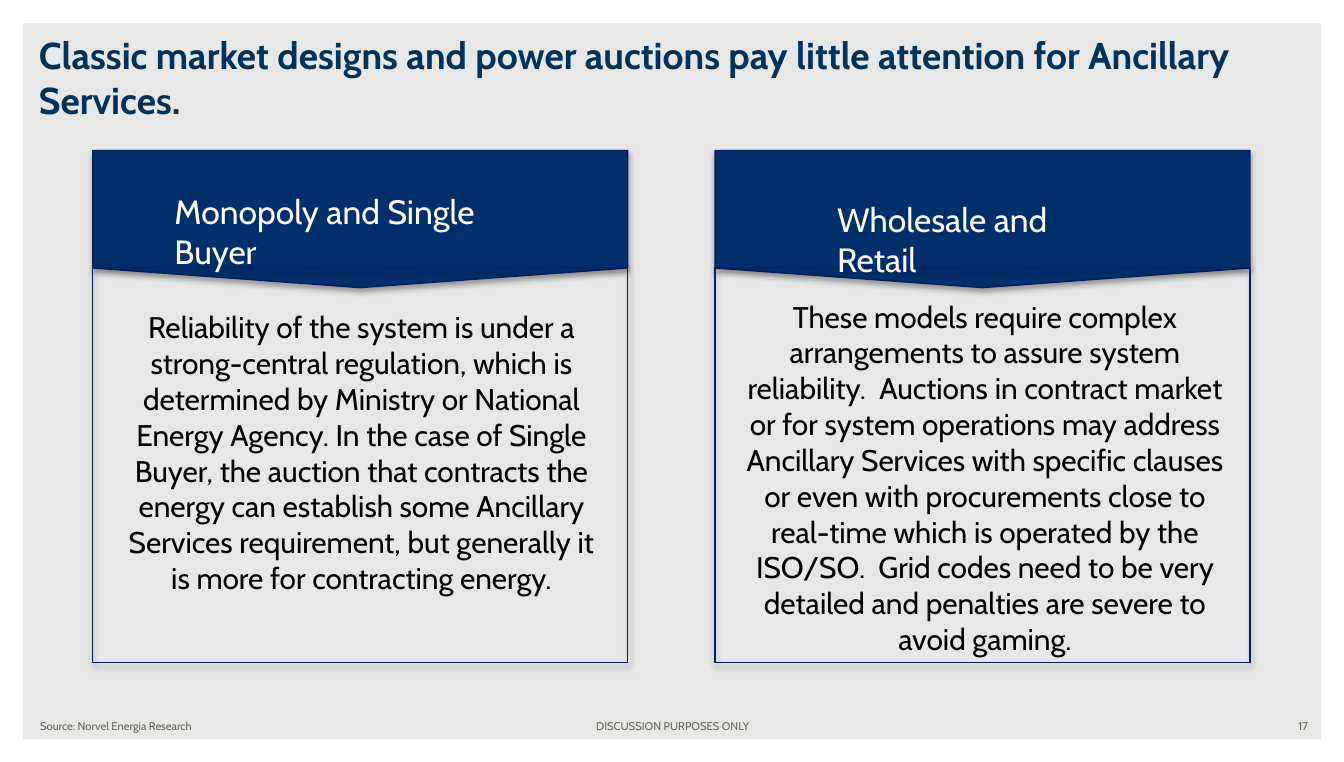
from lxml.etree import SubElement
from pptx import Presentation
from pptx.dml.color import RGBColor
from pptx.enum.shapes import MSO_SHAPE as Shape
from pptx.enum.text import MSO_ANCHOR as Anchor, MSO_AUTO_SIZE as AutoSize, PP_ALIGN as Align
from pptx.oxml.ns import qn
from pptx.util import Inches, Pt

WIDTH, HEIGHT = 10, 5.67
FONT = "Cabin"
COLORS = {
    "background": "E7E7E5",
    "white": "FFFFFF",
    "title": "00335C",
    "banner": "002F6C",
    "outline": "002060",
    "body": "000000",
    "footer": "6C6463",
    "shadow": "000000",
}

# Two equal columns of cards
CARD_LEFT, CARD_PITCH, CARD_WIDTH = 0.69, 4.63, 3.98
BANNER_TOP, BANNER_HEIGHT = 1.12, 1.02
PANEL_TOP, PANEL_HEIGHT = 1.99, 2.94
FOOTER_TOP, FOOTER_HEIGHT = 5.3, 0.2

# Heading, its box; body, its box. Boxes are measured from the card's left edge.
CARDS = [
    ("Monopoly and Single Buyer", (0.51, 1.37, 2.9, 0.4),
     "Reliability of the system is under a strong-central regulation, which is "
     "determined by Ministry or National Energy Agency. In the case of Single "
     "Buyer, the auction that contracts the energy can establish some Ancillary "
     "Services requirement, but generally it is more for contracting energy.",
     (0.09, 2.25, 3.82, 2.26)),
    ("Wholesale and Retail", (0.81, 1.43, 2.3, 0.4),
     "These models require complex arrangements to assure system reliability.  "
     "Auctions in contract market or for system operations may address Ancillary "
     "Services with specific clauses or even with procurements close to real-time "
     "which is operated by the ISO/SO.  Grid codes need to be very detailed and "
     "penalties are severe to avoid gaming.",
     (0.06, 2.17, 3.9, 2.52)),
]
FOOTERS = [
    ("Source: Norvel Energia Research", 0.2, 3.17, Align.LEFT),
    ("DISCUSSION PURPOSES ONLY", 3.42, 3.17, Align.CENTER),
    ("17", 7.5, 2.33, Align.RIGHT),
]


def color(name):
    return RGBColor.from_string(COLORS[name])


def write(shape, text, size, color_name, align=Align.LEFT, anchor=Anchor.TOP, bold=False):
    frame = shape.text_frame
    frame.text = text
    frame.word_wrap = True
    frame.auto_size = AutoSize.NONE
    frame.vertical_anchor = anchor
    paragraph = frame.paragraphs[0]
    paragraph.alignment = align
    font = paragraph.runs[0].font
    font.name, font.size, font.bold = FONT, Pt(size), bold
    font.color.rgb = color(color_name)


def add_text(slide, box, text, size, color_name, **options):
    shape = slide.shapes.add_textbox(*map(Inches, box))
    write(shape, text, size, color_name, **options)


def add_shadow(shape):
    """Give the shape a soft shadow that falls straight down."""
    shape.shadow.inherit = False
    effects = shape._element.spPr.find(qn("a:effectLst"))
    shadow = SubElement(effects, qn("a:outerShdw"), blurRad=str(Pt(3.1)),
                        dist=str(Pt(1.8)), dir="5400000", rotWithShape="0")
    shade = SubElement(shadow, qn("a:srgbClr"), val=COLORS["shadow"])
    SubElement(shade, qn("a:alpha"), val="35000")


def add_outlined(slide, kind, box, fill=None):
    shape = slide.shapes.add_shape(kind, *map(Inches, box))
    if fill:
        shape.fill.solid()
        shape.fill.fore_color.rgb = color(fill)
    else:
        shape.fill.background()
    shape.line.color.rgb = color("outline")
    shape.line.width = Pt(0.75)
    add_shadow(shape)
    return shape


def add_banner(slide, left):
    """Add a pentagon turned to point down, across the top of a card."""
    shift = (CARD_WIDTH - BANNER_HEIGHT) / 2
    box = (left + shift, BANNER_TOP - shift, BANNER_HEIGHT, CARD_WIDTH)
    banner = add_outlined(slide, Shape.PENTAGON, box, "banner")
    banner.adjustments[0] = 0.143
    banner.rotation = 90


def add_card(slide, column, heading, heading_box, body, body_box):
    left = CARD_LEFT + column * CARD_PITCH
    add_banner(slide, left)
    add_outlined(slide, Shape.RECTANGLE, (left, PANEL_TOP, CARD_WIDTH, PANEL_HEIGHT))
    for text, box, size, color_name, align in (
        (body, body_box, 16, "body", Align.CENTER),
        (heading, heading_box, 18, "white", Align.LEFT),
    ):
        offset, *rest = box
        add_text(slide, (left + offset, *rest), text, size, color_name, align=align)


def add_border(slide):
    border = slide.shapes.add_shape(Shape.FRAME, 0, 0, Inches(WIDTH), Inches(HEIGHT))
    border.adjustments[0] = 0.03
    border.fill.solid()
    border.fill.fore_color.rgb = color("white")
    border.line.fill.background()
    border.shadow.inherit = False


def set_title(slide, text):
    title = slide.shapes.title
    title.left, title.top, title.width, title.height = map(Inches, (0.19, 0.19, 9.64, 0.77))
    write(title, text, 20, "title", anchor=Anchor.BOTTOM, bold=True)


def main():
    presentation = Presentation()
    presentation.slide_width, presentation.slide_height = Inches(WIDTH), Inches(HEIGHT)
    slide = presentation.slides.add_slide(presentation.slide_layouts[5])
    slide.background.fill.solid()
    slide.background.fill.fore_color.rgb = color("background")

    add_border(slide)
    set_title(slide, "Classic market designs and power auctions pay little "
                     "attention for Ancillary Services.")
    for column, card in enumerate(CARDS):
        add_card(slide, column, *card)
    for text, left, width, align in FOOTERS:
        add_text(slide, (left, FOOTER_TOP, width, FOOTER_HEIGHT), text, 6, "footer",
                 align=align, anchor=Anchor.MIDDLE)

    presentation.save("out.pptx")


if __name__ == "__main__":
    main()
